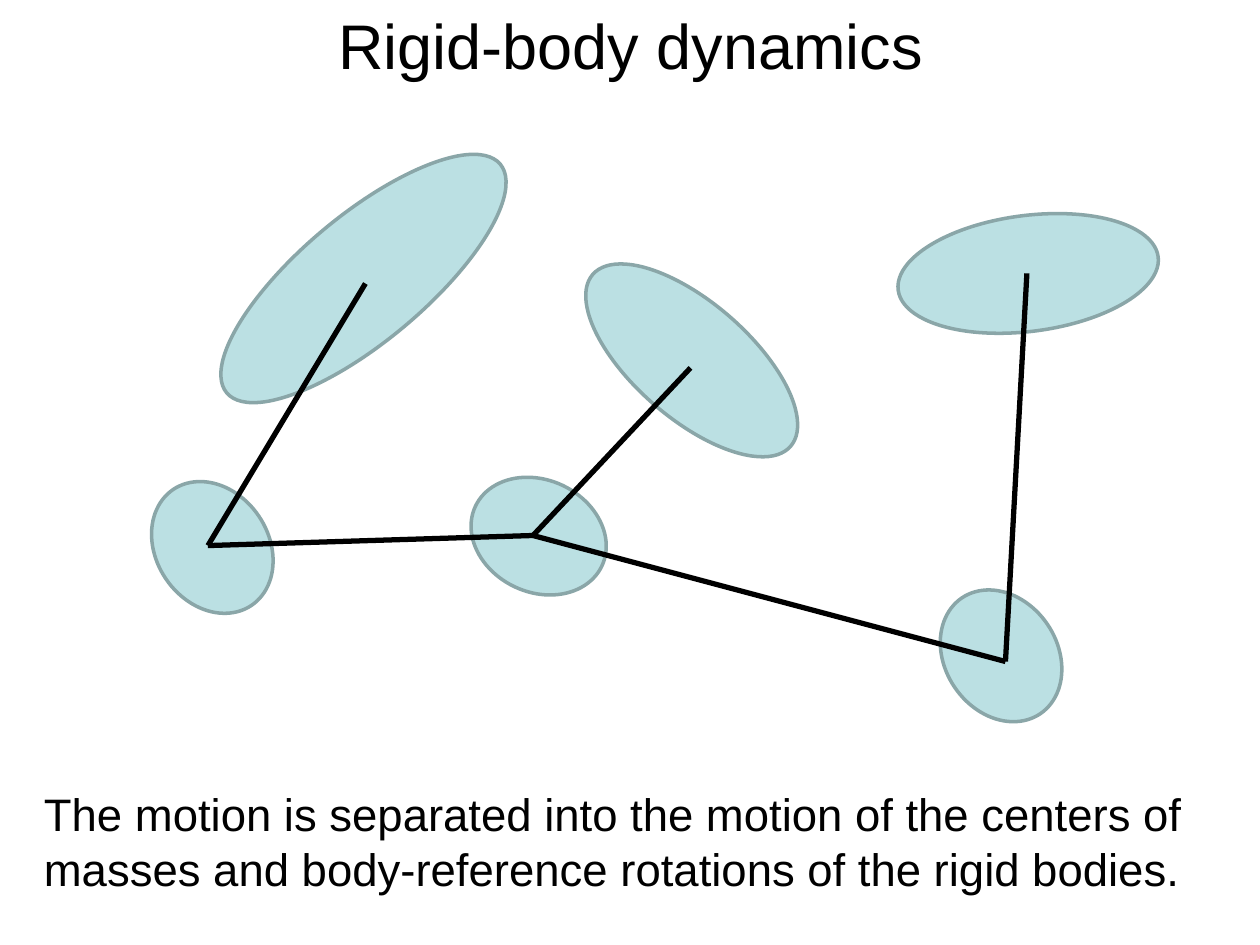
from lxml.etree import SubElement
from pptx import Presentation
from pptx.dml.color import RGBColor
from pptx.enum.shapes import MSO_CONNECTOR, MSO_SHAPE
from pptx.enum.text import PP_ALIGN
from pptx.oxml.ns import qn
from pptx.util import Inches, Pt


def color(hex_string):
    return RGBColor.from_string(hex_string)


def add_text(text, left, top, width, height, size, align=PP_ALIGN.LEFT):
    box = slide.shapes.add_textbox(
        Inches(left), Inches(top), Inches(width), Inches(height))
    box.text_frame.word_wrap = True
    paragraph = box.text_frame.paragraphs[0]
    paragraph.alignment = align
    run = paragraph.add_run()
    run.text = text
    run.font.name = "Arial"
    run.font.size = Pt(size)
    run.font.color.rgb = color("000000")


presentation = Presentation()
presentation.slide_width = Inches(10)
presentation.slide_height = Inches(7.5)
slide = presentation.slides.add_slide(presentation.slide_layouts[6])

# Title
add_text("Rigid-body dynamics", 0.17, 0, 9.67, 0.71, size=36,
         align=PP_ALIGN.CENTER)

# Rigid bodies: left, top, width, height, rotation
bodies = [
    (1.47, 1.71, 2.83, 1, 320.1),
    (4.45, 2.4, 2.08, 0.92, 41),
    (7.12, 1.71, 2.08, 0.92, 172.7),
    (3.72, 3.81, 1.11, 0.89, 25.3),
    (7.39, 4.76, 1.11, 0.89, 55.9),
    (1.13, 3.9, 1.11, 0.89, 55.9),
]
for left, top, width, height, rotation in bodies:
    body = slide.shapes.add_shape(
        MSO_SHAPE.OVAL, Inches(left), Inches(top), Inches(width), Inches(height))
    body.rotation = rotation
    body.shadow.inherit = False
    body.fill.solid()
    body.fill.fore_color.rgb = color("BBE0E3")
    body.line.color.rgb = color("8AA6A8")
    body.line.width = Pt(2)

# Links between the centers of the bodies
left_joint, middle_joint, right_joint = (1.65, 4.33), (4.23, 4.25), (7.98, 5.25)
links = [
    (left_joint, (2.9, 2.25)),
    (left_joint, middle_joint),
    (middle_joint, right_joint),
    (middle_joint, (5.48, 2.92)),
    (right_joint, (8.15, 2.17)),
]
for start, end in links:
    link = slide.shapes.add_connector(
        MSO_CONNECTOR.STRAIGHT, *[Inches(value) for value in start + end])
    link.line.color.rgb = color("000000")
    link.line.width = Pt(3)
    SubElement(link.element.spPr, qn("a:effectLst"))

# Explanation
add_text("The motion is separated into the motion of the centers of masses "
         "and body-reference rotations of the rigid bodies.",
         0.25, 6.19, 9.5, 0.98, size=26)

presentation.save("out.pptx")
